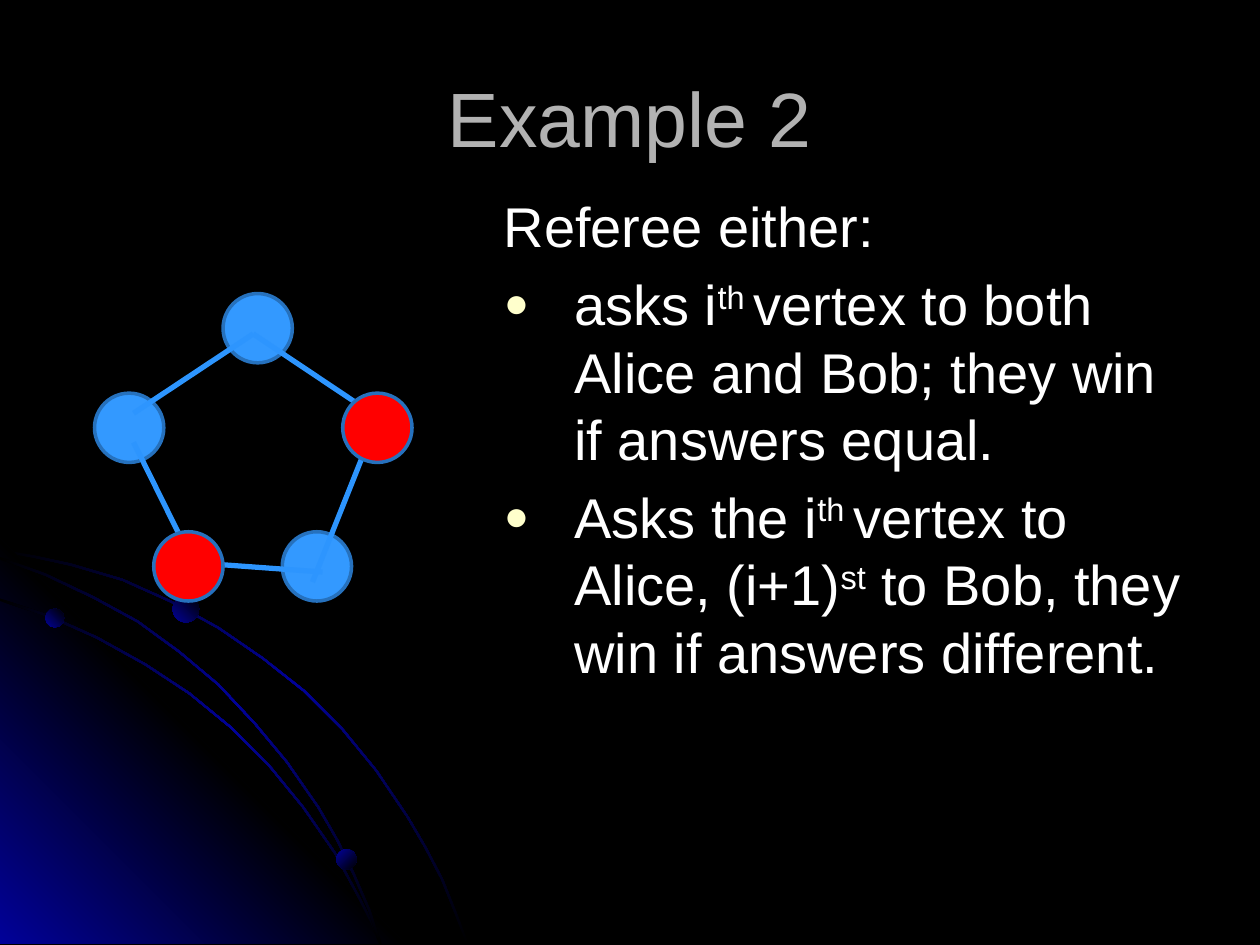
from copy import deepcopy

from lxml.etree import SubElement
from pptx import Presentation
from pptx.dml.color import RGBColor
from pptx.enum.shapes import MSO_CONNECTOR, MSO_SHAPE
from pptx.enum.text import MSO_ANCHOR, PP_ALIGN
from pptx.oxml.ns import qn
from pptx.util import Inches, Pt

BLACK, NAVY, BLUE, RED = "000000", "010199", "3399FF", "FF0000"
RIBBON_WIDTH = 0.02
DISC_SIZE = 0.55
RIBBONS = [
    [(0, 4.38), (0.28, 4.43), (0.56, 4.49), (0.97, 4.61), (1.35, 4.78), (1.73, 4.99),
     (2.08, 5.23), (2.41, 5.49), (2.71, 5.79), (2.98, 6.12), (3.23, 6.49), (3.37, 6.73),
     (3.5, 6.98), (3.6, 7.23), (3.7, 7.49)],
    [(0, 4.77), (0.39, 4.9), (0.77, 5.07), (1.15, 5.28), (1.5, 5.51), (1.83, 5.78),
     (2.13, 6.08), (2.4, 6.41), (2.65, 6.77), (2.85, 7.14), (2.94, 7.32), (3.01, 7.49)],
    [(0, 4.44), (0.36, 4.57), (0.74, 4.75), (1.09, 4.94), (1.42, 5.18), (1.73, 5.44),
     (2.02, 5.75), (2.27, 6.05), (2.52, 6.41), (2.67, 6.67), (2.8, 6.94), (2.92, 7.22),
     (3.01, 7.49)],
]
CORNER = [(3.22, 7.49), (0, 7.49), (0, 4.27)]
BEADS = [(0.36, 4.83, 0.15, 315), (2.67, 6.74, 0.16, 45), (1.37, 4.73, 0.21, 315)]
BLUE_VERTICES = [(0.75, 3.12), (1.77, 2.33), (2.24, 4.22)]
RED_VERTICES = [(1.22, 4.22), (2.72, 3.12)]
EDGES = [
    ((2.01, 2.65), (1.06, 3.28)),
    ((2.01, 2.65), (3.19, 3.44)),
    ((2.95, 3.44), (2.48, 4.62)),
    ((2.56, 4.54), (1.46, 4.46)),
    ((1.53, 4.46), (1.06, 3.51)),
]
RULES = [
    [("asks i", 0), ("th ", 30),
     ("vertex to both Alice and Bob; they win if answers equal.", 0)],
    [("Asks the i", 0), ("th ", 30), ("vertex to Alice, (i+1)", 0), ("st", 30),
     (" to Bob, they win if answers different.", 0)],
]


def color(value):
    """Turn a hex string into a colour."""
    return RGBColor.from_string(value)


def fill_gradient(shape, colors, angle):
    """Fill a shape with evenly spaced colours, the angle running clockwise."""
    shape.shadow.inherit = False
    shape.line.fill.background()
    shape.fill.gradient()
    shape.fill.gradient_angle = 360 - angle
    stop_list = shape._element.spPr.find(qn("a:gradFill")).find(qn("a:gsLst"))
    while len(stop_list) < len(colors):
        stop_list.append(deepcopy(stop_list[0]))
    for index, (stop, value) in enumerate(zip(shape.fill.gradient_stops, colors)):
        stop.position = index / (len(colors) - 1)
        stop.color.rgb = color(value)


def add_outline(slide, points, colors, angle):
    """Draw a closed gradient outline through points in inches."""
    corners = [(Inches(x), Inches(y)) for x, y in points]
    builder = slide.shapes.build_freeform(*corners[0])
    builder.add_line_segments(corners[1:], close=True)
    fill_gradient(builder.convert_to_shape(), colors, angle)


def add_ribbon(slide, lower_edge):
    """Draw a thin arc whose upper edge turns from above to the right."""
    last = len(lower_edge) - 1
    upper_edge = [
        (x + RIBBON_WIDTH * index / last, y - RIBBON_WIDTH * (1 - index / last))
        for index, (x, y) in enumerate(lower_edge)
    ]
    add_outline(slide, lower_edge + upper_edge[::-1], [BLACK, NAVY, BLACK], 45)


def add_disc(slide, left, top, size):
    """Add a circle."""
    return slide.shapes.add_shape(
        MSO_SHAPE.OVAL, Inches(left), Inches(top), Inches(size), Inches(size))


def add_vertex(slide, left, top, fill):
    """Add a graph vertex."""
    disc = add_disc(slide, left, top, DISC_SIZE)
    disc.shadow.inherit = False
    disc.fill.solid()
    disc.fill.fore_color.rgb = color(fill)
    disc.line.color.rgb = color("2671BD")
    disc.line.width = Pt(2)


def add_edge(slide, start, end):
    """Add a graph edge."""
    edge = slide.shapes.add_connector(
        MSO_CONNECTOR.STRAIGHT, *(Inches(value) for value in start + end))
    edge.line.color.rgb = color("2D95FE")
    edge.line.width = Pt(3)
    SubElement(edge._element.spPr, qn("a:effectLst"))


def add_text(para, text, size=32, fill="FFFFFF", baseline=0):
    """Add a formatted run to a paragraph."""
    span = para.add_run()
    span.text = text
    span.font.name = "Arial"
    span.font.size = Pt(size)
    span.font.color.rgb = color(fill)
    if baseline:
        span._r.get_or_add_rPr().set("baseline", str(baseline * 1000))


def format_item(para, bullet=True):
    """Give a paragraph its hanging indent, spacing and bullet."""
    para.space_before = Pt(6.4)
    properties = para._p.get_or_add_pPr()
    properties.set("marL", str(Inches(0.56)))
    properties.set("indent", str(-Inches(0.56)))
    if bullet:
        bullet_color = SubElement(properties, qn("a:buClr"))
        SubElement(bullet_color, qn("a:srgbClr"), val="FFFFCC")
        SubElement(properties, qn("a:buSzPct"), val="75000")
        SubElement(properties, qn("a:buFont"), typeface="Arial")
        SubElement(properties, qn("a:buChar"), char="●")


def add_title(slide, text):
    """Place and fill the title."""
    title = slide.shapes.title
    title.left, title.top, title.width, title.height = map(Inches, (0.5, 0.3, 9, 1.25))
    title.text_frame.vertical_anchor = MSO_ANCHOR.MIDDLE
    para = title.text_frame.paragraphs[0]
    para.alignment = PP_ALIGN.CENTER
    add_text(para, text, size=44, fill="B2B2B2")


def add_rules(slide):
    """Add the referee's rules."""
    box = slide.shapes.add_textbox(*map(Inches, (3.9, 1.47, 5.6, 5.28)))
    frame = box.text_frame
    frame.word_wrap = True
    format_item(frame.paragraphs[0], bullet=False)
    add_text(frame.paragraphs[0], "Referee either:")
    for rule in RULES:
        para = frame.add_paragraph()
        format_item(para)
        for text, baseline in rule:
            add_text(para, text, baseline=baseline)


def add_backdrop(slide):
    """Draw the glowing corner with its arcs and beads."""
    slide.background.fill.solid()
    slide.background.fill.fore_color.rgb = color(BLACK)
    add_ribbon(slide, RIBBONS[0])
    add_outline(slide, CORNER, [NAVY, BLACK, NAVY], 315)
    for ribbon in RIBBONS[1:]:
        add_ribbon(slide, ribbon)
    for left, top, size, angle in BEADS:
        fill_gradient(add_disc(slide, left, top, size), [NAVY, BLACK], angle)


def add_graph(slide):
    """Draw the five-vertex cycle."""
    for left, top in BLUE_VERTICES:
        add_vertex(slide, left, top, BLUE)
    for start, end in EDGES:
        add_edge(slide, start, end)
    for left, top in RED_VERTICES:
        add_vertex(slide, left, top, RED)


def main():
    """Build and save the deck."""
    deck = Presentation()
    deck.slide_width, deck.slide_height = Inches(10), Inches(7.5)
    page = deck.slides.add_slide(deck.slide_layouts[5])
    add_backdrop(page)
    add_title(page, "Example 2")
    add_rules(page)
    add_graph(page)
    deck.save("out.pptx")


if __name__ == "__main__":
    main()
